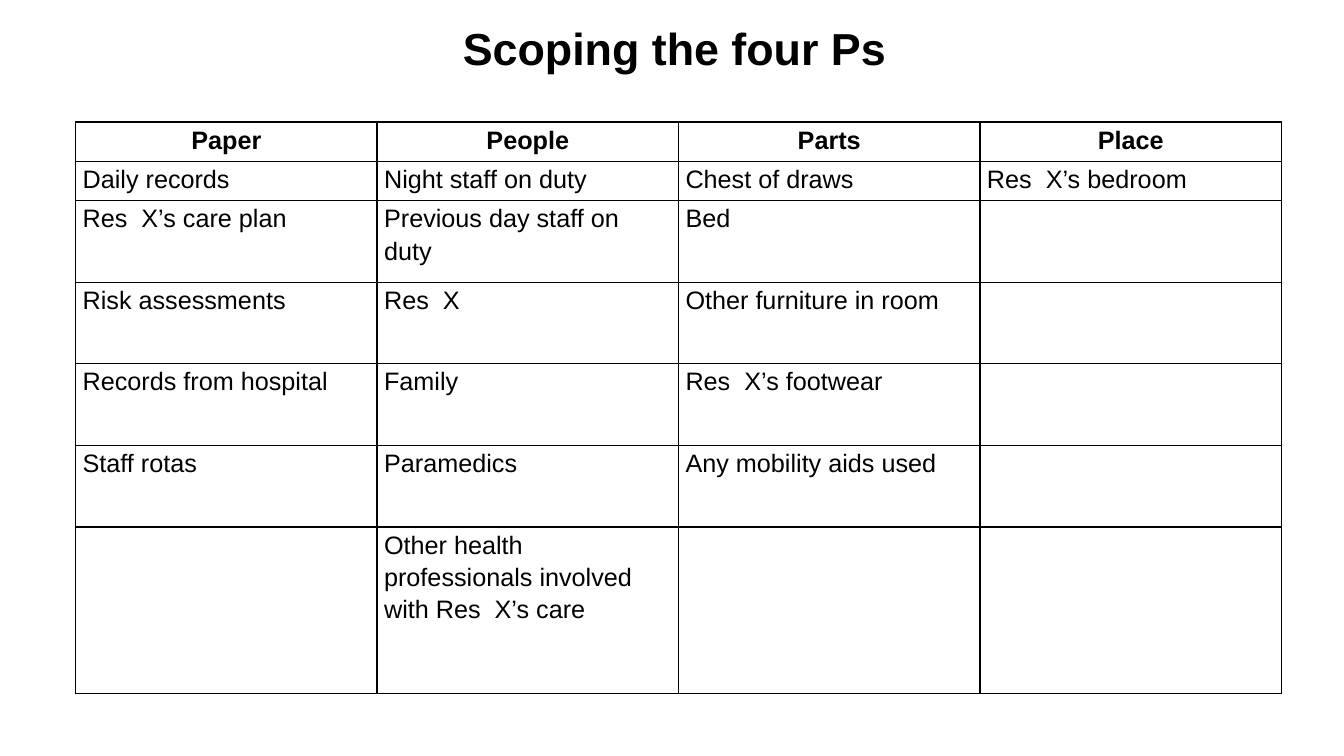
from lxml.etree import SubElement
from pptx import Presentation
from pptx.dml.color import RGBColor
from pptx.enum.text import MSO_ANCHOR, MSO_AUTO_SIZE, PP_ALIGN
from pptx.oxml.ns import qn
from pptx.util import Inches, Pt

BLACK = RGBColor(0x00, 0x00, 0x00)
WHITE = RGBColor(0xFF, 0xFF, 0xFF)
FONT = "Arial"
PAGE_WIDTH = Inches(13.33)
PAGE_HEIGHT = Inches(7.5)

TITLE = "Scoping the four Ps"
SCOPE = {
    "Paper": [
        "Daily records",
        "Res  X’s care plan",
        "Risk assessments",
        "Records from hospital",
        "Staff rotas",
    ],
    "People": [
        "Night staff on duty",
        "Previous day staff on duty",
        "Res  X",
        "Family",
        "Paramedics",
        "Other health professionals involved with Res  X’s care",
    ],
    "Parts": [
        "Chest of draws",
        "Bed",
        "Other furniture in room",
        "Res  X’s footwear",
        "Any mobility aids used",
    ],
    "Place": ["Res  X’s bedroom"],
}
COLUMN_WIDTH = Inches(2.99)
ROW_HEIGHTS = [Inches(height) for height in [0.39] * 2 + [0.81] * 4 + [1.65]]


def format_paragraph(para, size, bold, align, spacing):
    para.alignment = align
    para.line_spacing = spacing
    for font in [para.font] + [span.font for span in para.runs]:
        font.name = FONT
        font.size = Pt(size)
        font.bold = bold
        font.color.rgb = BLACK


def add_title(page):
    title = page.shapes.title
    title.left, title.top = Inches(4.49), Inches(0.13)
    title.width, title.height = Inches(4.42), Inches(0.76)
    frame = title.text_frame
    frame.text = TITLE
    frame.word_wrap = True
    frame.auto_size = MSO_AUTO_SIZE.NONE
    frame.vertical_anchor = MSO_ANCHOR.MIDDLE
    format_paragraph(frame.paragraphs[0], 32, True, PP_ALIGN.LEFT, 0.9)


def add_borders(cell):
    properties = cell._tc.get_or_add_tcPr()
    for side in ("lnL", "lnR", "lnT", "lnB"):
        line = SubElement(properties, qn(f"a:{side}"), w=str(Pt(1)))
        fill = SubElement(line, qn("a:solidFill"))
        SubElement(fill, qn("a:srgbClr"), val=str(BLACK))


def fill_cell(cell, text, heading):
    add_borders(cell)
    cell.fill.solid()
    cell.fill.fore_color.rgb = WHITE
    cell.margin_left = cell.margin_right = Inches(0.07)
    cell.margin_top = cell.margin_bottom = 0
    cell.text_frame.text = text
    align = PP_ALIGN.CENTER if heading else PP_ALIGN.LEFT
    format_paragraph(cell.text_frame.paragraphs[0], 18, heading, align, 1.15)


def add_scope_table(page):
    frame = page.shapes.add_table(
        len(ROW_HEIGHTS), len(SCOPE), Inches(0.75), Inches(1.21),
        COLUMN_WIDTH * len(SCOPE), sum(ROW_HEIGHTS),
    )
    table = frame.table
    table.first_row = table.horz_banding = False
    for row, height in zip(table.rows, ROW_HEIGHTS):
        row.height = height
    for column, (heading, entries) in enumerate(SCOPE.items()):
        table.columns[column].width = COLUMN_WIDTH
        texts = [heading, *entries]
        for row in range(len(ROW_HEIGHTS)):
            text = texts[row] if row < len(texts) else ""
            fill_cell(table.cell(row, column), text, row == 0)


def main():
    deck = Presentation()
    deck.slide_width, deck.slide_height = PAGE_WIDTH, PAGE_HEIGHT
    page = deck.slides.add_slide(deck.slide_layouts.get_by_name("Title Only"))
    page.background.fill.solid()
    page.background.fill.fore_color.rgb = WHITE
    add_title(page)
    add_scope_table(page)
    deck.save("out.pptx")


if __name__ == "__main__":
    main()
